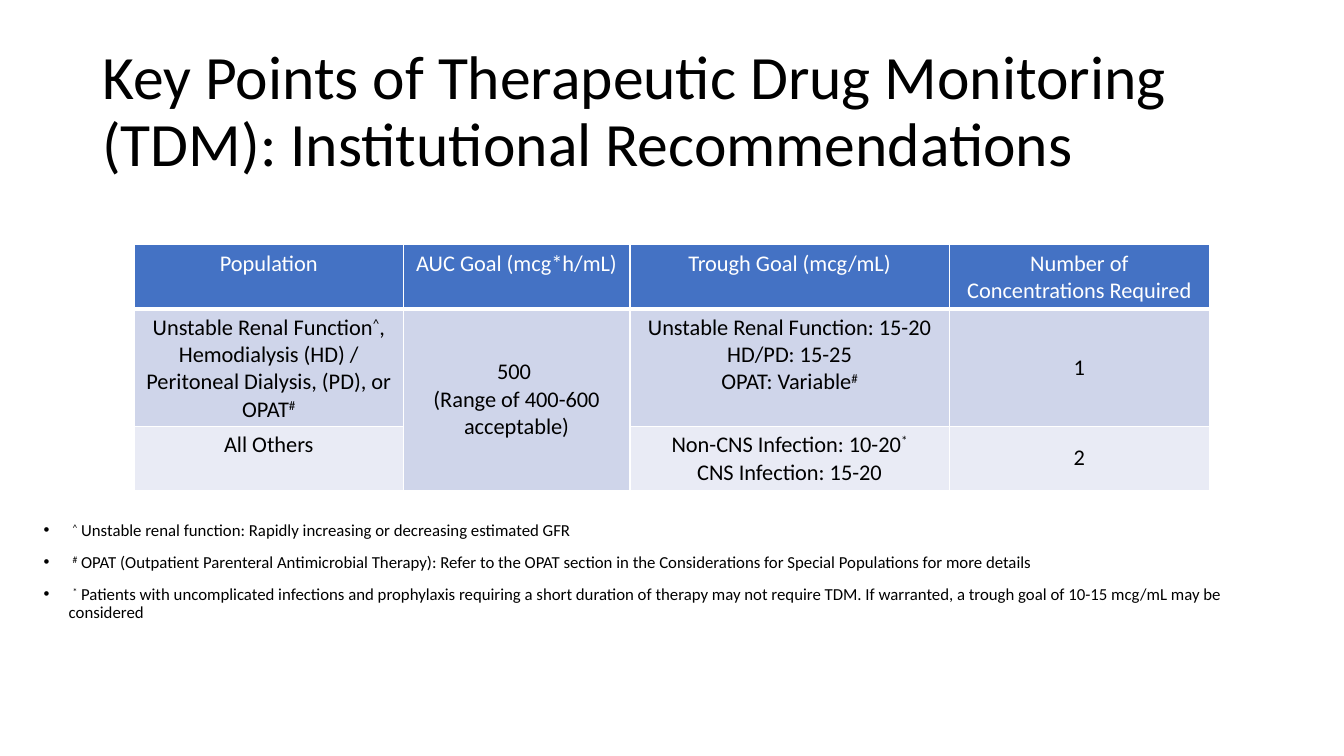
from dataclasses import dataclass

from lxml.etree import SubElement
from pptx import Presentation
from pptx.dml.color import RGBColor
from pptx.enum.text import MSO_ANCHOR, PP_ALIGN
from pptx.oxml.ns import qn
from pptx.util import Emu, Pt

BLACK, WHITE = "000000", "FFFFFF"
HEAD, DARK, LIGHT = "4472C4", "CFD5EA", "E9EBF5"
COLS = (256, 216, 304, 248)
ROWS = (61, 111, 61)


@dataclass
class Entry:
    row: int
    col: int
    text: str
    fill: str
    color: str = BLACK
    middle: bool = False


TITLE = "Key Points of Therapeutic Drug Monitoring (TDM): Institutional Recommendations"
HEADS = ("Population", "AUC Goal (mcg*h/mL)", "Trough Goal (mcg/mL)",
         "Number of Concentrations Required")
# Text between two bars is raised; a line feed starts a new paragraph.
ENTRIES = [Entry(0, col, text, HEAD, WHITE) for col, text in enumerate(HEADS)] + [
    Entry(1, 0, "Unstable Renal Function|^|, Hemodialysis (HD) / "
                "Peritoneal Dialysis, (PD), or OPAT|#|", DARK),
    Entry(1, 1, "500 \n(Range of 400-600 acceptable)", DARK, middle=True),
    Entry(1, 2, "Unstable Renal Function: 15-20\nHD/PD: 15-25\nOPAT: Variable|#|", DARK),
    Entry(1, 3, "1", DARK, middle=True),
    Entry(2, 0, "All Others", LIGHT),
    Entry(2, 2, "Non-CNS Infection: 10-20|*|\nCNS Infection: 15-20", LIGHT),
    Entry(2, 3, "2", LIGHT, middle=True),
]
NOTES = "\n".join((
    " |^| Unstable renal function: Rapidly increasing or decreasing estimated GFR",
    " |#| OPAT (Outpatient Parenteral Antimicrobial Therapy): Refer to the OPAT section "
    "in the Considerations for Special Populations for more details",
    " |*| Patients with uncomplicated infections and prophylaxis requiring a short duration "
    "of therapy may not require TDM. If warranted, a trough goal of 10-15 mcg/mL may be "
    "considered",
))


def px(size: int) -> Emu:
    return Emu(size * 9525)


def rgb(code: str) -> RGBColor:
    return RGBColor.from_string(code)


def add_bullet(para) -> None:
    props = para._p.get_or_add_pPr()
    props.set("marL", str(px(24)))
    props.set("indent", str(px(-24)))
    SubElement(props, qn("a:buFont"), typeface="Arial")
    SubElement(props, qn("a:buChar"), char="•")


def write(frame, text: str, *, size: int, color: str = BLACK, align=PP_ALIGN.LEFT,
          leading: float = 1.0, before: int = 0, bullet: bool = False) -> None:
    """Fill a text frame; bars enclose superscripts, line feeds part paragraphs."""
    for num, line in enumerate(text.split("\n")):
        para = frame.add_paragraph() if num else frame.paragraphs[0]
        para.alignment = align
        para.line_spacing = leading
        para.space_before = Pt(before)
        if bullet:
            add_bullet(para)
        for part, words in enumerate(line.split("|")):
            if not words:
                continue
            run = para.add_run()
            run.text = words
            font = run.font
            font.name, font.size, font.bold = "Calibri", Pt(size), False
            font.color.rgb = rgb(color)
            if part % 2:
                run._r.get_or_add_rPr().set("baseline", "30000")


def add_box(slide, left: int, top: int, width: int, height: int, anchor=MSO_ANCHOR.TOP):
    frame = slide.shapes.add_textbox(px(left), px(top), px(width), px(height)).text_frame
    frame.word_wrap = True
    frame.vertical_anchor = anchor
    return frame


def add_edges(cell, below: int) -> None:
    """Draw white cell borders, the lower one `below` points wide."""
    props = cell._tc.get_or_add_tcPr()
    for side, width in (("L", 1), ("R", 1), ("T", 1), ("B", below)):
        line = SubElement(props, qn(f"a:ln{side}"), w=str(Pt(width)))
        fill = SubElement(line, qn("a:solidFill"))
        SubElement(fill, qn("a:srgbClr"), val=WHITE)


def add_goals(slide) -> None:
    table = slide.shapes.add_table(len(ROWS), len(COLS), px(128), px(233),
                                   px(sum(COLS)), px(sum(ROWS))).table
    for col, width in zip(table.columns, COLS):
        col.width = px(width)
    for num, height in enumerate(ROWS):
        table.rows[num].height = px(height)
        for col in range(len(COLS)):
            add_edges(table.cell(num, col), 1 if num else 3)
    table.cell(1, 1).merge(table.cell(2, 1))
    for entry in ENTRIES:
        cell = table.cell(entry.row, entry.col)
        cell.fill.solid()
        cell.fill.fore_color.rgb = rgb(entry.fill)
        cell.vertical_anchor = MSO_ANCHOR.MIDDLE if entry.middle else MSO_ANCHOR.TOP
        write(cell.text_frame, entry.text, size=16, color=entry.color, align=PP_ALIGN.CENTER)


def main() -> None:
    deck = Presentation()
    deck.slide_width, deck.slide_height = px(1280), px(720)
    slide = deck.slides.add_slide(deck.slide_layouts[6])
    write(add_box(slide, 88, 38, 1104, 139, MSO_ANCHOR.MIDDLE), TITLE, size=44, leading=0.9)
    write(add_box(slide, 32, 492, 1216, 211), NOTES, size=12, leading=0.9, before=10,
          bullet=True)
    add_goals(slide)
    deck.save("out.pptx")


if __name__ == "__main__":
    main()
